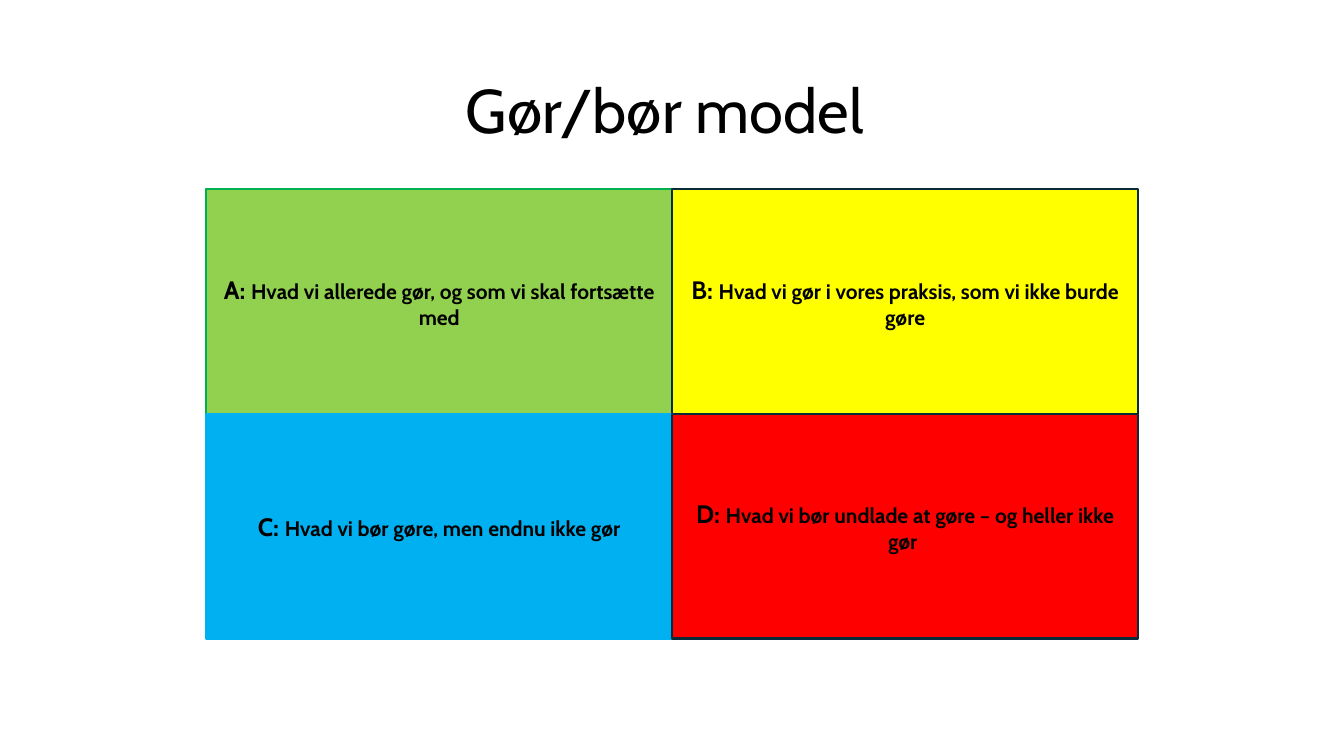
import pptx
import pptx.util
import pptx.dml.color
import pptx.enum.shapes
import pptx.enum.text

Cm, Pt = pptx.util.Cm, pptx.util.Pt

COLOURS = {
    "text": "000000",
    "green": "92D050",
    "dark green": "00B050",
    "yellow": "FFFF00",
    "blue": "00B0F0",
    "red": "FF0000",
    "navy": "092A39",
}
FONT = "Cabin"
HEADING = "Gør/bør model "
# letter, statement, fill, outline; read row by row
QUADRANTS = [
    ("A: ", "Hvad vi allerede gør, og som vi skal fortsætte med", "green", "dark green"),
    ("B: ", "Hvad vi gør i vores praksis, som vi ikke burde gøre", "yellow", "navy"),
    ("C: ", "Hvad vi bør gøre, men endnu ikke gør", "blue", "blue"),
    ("D: ", "Hvad vi bør undlade at gøre – og heller ikke gør ", "red", "navy"),
]
COLUMNS = 2
GRID_LEFT, GRID_TOP = 5.2, 4.77
QUADRANT_WIDTH, QUADRANT_HEIGHT = 11.74, 5.66


def colour(name):
    return pptx.dml.color.RGBColor.from_string(COLOURS[name])


def style_paragraph(paragraph):
    paragraph.alignment = pptx.enum.text.PP_ALIGN.CENTER
    paragraph.font.name = FONT
    paragraph.font.color.rgb = colour("text")


def add_quadrant(slide, index, letter, statement, fill, outline):
    row, column = divmod(index, COLUMNS)
    quadrant = slide.shapes.add_shape(
        pptx.enum.shapes.MSO_SHAPE.RECTANGLE,
        Cm(GRID_LEFT + column * QUADRANT_WIDTH),
        Cm(GRID_TOP + row * QUADRANT_HEIGHT),
        Cm(QUADRANT_WIDTH),
        Cm(QUADRANT_HEIGHT),
    )
    quadrant.shadow.inherit = False
    quadrant.fill.solid()
    quadrant.fill.fore_color.rgb = colour(fill)
    quadrant.line.color.rgb = colour(outline)
    quadrant.line.width = Pt(1.5)
    quadrant.text_frame.word_wrap = True
    quadrant.text_frame.vertical_anchor = pptx.enum.text.MSO_ANCHOR.MIDDLE

    paragraph = quadrant.text_frame.paragraphs[0]
    style_paragraph(paragraph)
    paragraph.font.bold = True
    for text, size in ((letter, 18), (statement, 15)):
        run = paragraph.add_run()
        run.text = text
        run.font.size = Pt(size)


def main():
    deck = pptx.Presentation()
    deck.slide_width, deck.slide_height = Cm(33.87), Cm(19.05)
    slide = deck.slides.add_slide(deck.slide_layouts[5])

    title = slide.shapes.title
    title.left, title.top = Cm(2.33), Cm(1.01)
    title.width, title.height = Cm(29.21), Cm(3.68)
    title.text_frame.text = HEADING
    title.text_frame.vertical_anchor = pptx.enum.text.MSO_ANCHOR.MIDDLE
    heading = title.text_frame.paragraphs[0]
    style_paragraph(heading)
    heading.font.size = Pt(44)
    heading.line_spacing = 0.9

    for index, quadrant in enumerate(QUADRANTS):
        add_quadrant(slide, index, *quadrant)

    deck.save("out.pptx")


if __name__ == "__main__":
    main()
